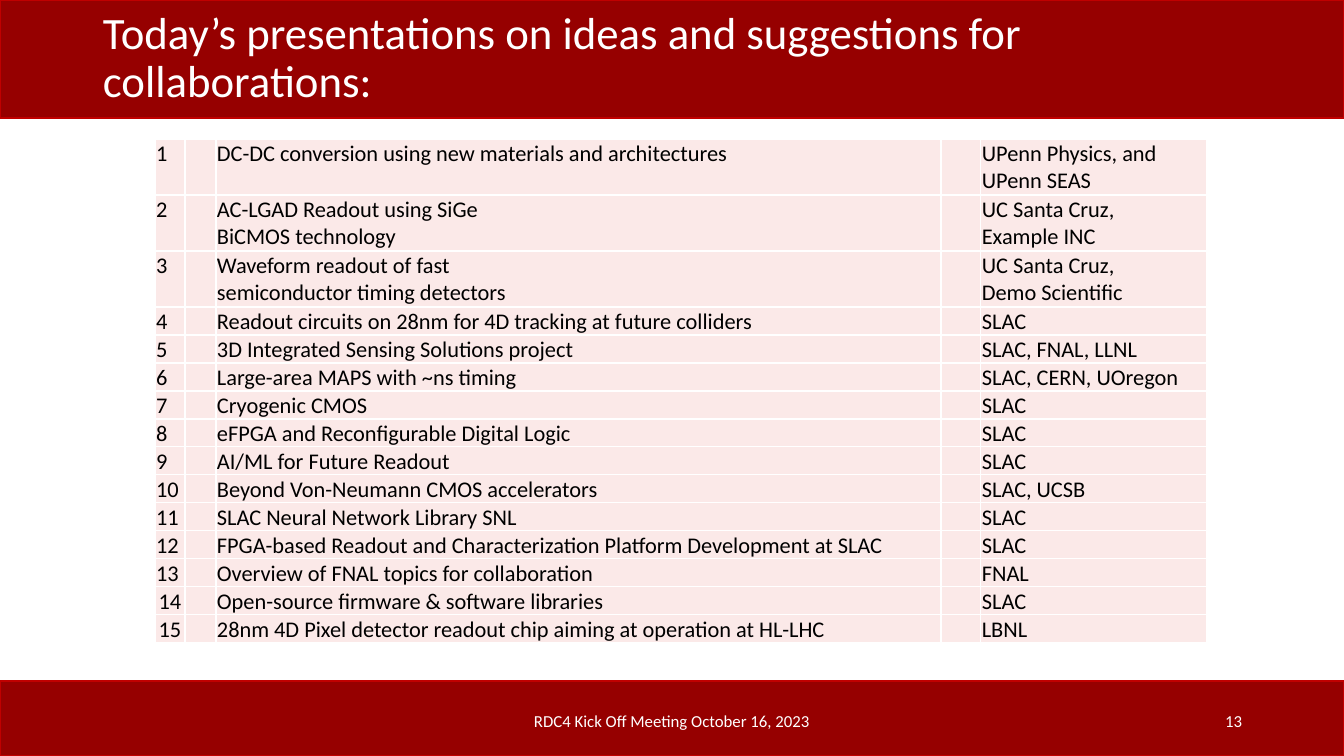
"""Build the slide listing today's presentations and their institutions."""
from lxml.etree import SubElement
from pptx import Presentation
from pptx.dml.color import RGBColor
from pptx.enum.shapes import MSO_SHAPE
from pptx.enum.text import MSO_ANCHOR as ANCHOR, PP_ALIGN as ALIGN
from pptx.oxml.ns import qn
from pptx.util import Pt

TITLE = "Today’s presentations on ideas and suggestions for collaborations:"
FOOTER = "RDC4 Kick Off Meeting October 16, 2023"
PAGE = "13"
TALKS = [
    ("DC-DC conversion using new materials and architectures", "UPenn Physics, and UPenn SEAS"),
    ("AC-LGAD Readout using SiGe\nBiCMOS technology", "UC Santa Cruz,\nExample INC"),
    ("Waveform readout of fast\nsemiconductor timing detectors", "UC Santa Cruz,\nDemo Scientific"),
    ("Readout circuits on 28nm for 4D tracking at future colliders", "SLAC"),
    ("3D Integrated Sensing Solutions project", "SLAC, FNAL, LLNL"),
    ("Large-area MAPS with ~ns timing", "SLAC, CERN, UOregon"),
    ("Cryogenic CMOS", "SLAC"),
    ("eFPGA and Reconfigurable Digital Logic", "SLAC"),
    ("AI/ML for Future Readout", "SLAC"),
    ("Beyond Von-Neumann CMOS accelerators", "SLAC, UCSB"),
    ("SLAC Neural Network Library SNL", "SLAC"),
    ("FPGA-based Readout and Characterization Platform Development at SLAC", "SLAC"),
    ("Overview of FNAL topics for collaboration", "FNAL"),
    ("Open-source firmware & software libraries", "SLAC"),
    ("28nm 4D Pixel detector readout chip aiming at operation at HL-LHC", "LBNL"),
]
CENTRED_FROM = 14
TALL_ROWS = 3
COLS = [30, 31, 725, 40, 226]
ROW_H = 28
TABLE_LEFT, TABLE_TOP = 155, 139
SLIDE_W, SLIDE_H = 1344, 756
BANDS = [(681, 75), (0, 118)]
FONT = "Calibri"
WHITE, BLACK, DARK_RED, RED, PINK = "FFFFFF", "000000", "960000", "C00000", "FBE9E8"


def px(n):
    return round(n * 914400 / 100.8)


def rgb(code):
    return RGBColor.from_string(code)


def write(tf, text, size, color, align=ALIGN.LEFT):
    tf.word_wrap = True
    p = tf.paragraphs[0]
    p.alignment = align
    for i, line in enumerate(text.split("\n")):
        if i:
            p.add_line_break()
        r = p.add_run()
        r.text = line
        r.font.name, r.font.size = FONT, Pt(size)
        r.font.color.rgb = rgb(color)
    return p


def add_band(s, top, height):
    sp = s.shapes.add_shape(MSO_SHAPE.RECTANGLE, 0, px(top), px(SLIDE_W), px(height))
    sp.shadow.inherit = False
    sp.fill.solid()
    sp.fill.fore_color.rgb = rgb(DARK_RED)
    sp.line.color.rgb = rgb(RED)
    sp.line.width = Pt(1)


def add_label(s, box, text, size, align):
    tf = s.shapes.add_textbox(*map(px, box)).text_frame
    tf.vertical_anchor = ANCHOR.MIDDLE
    return write(tf, text, size, WHITE, align)


def style_cell(cell):
    tc_pr = cell._tc.get_or_add_tcPr()
    for side in ("a:lnL", "a:lnR", "a:lnT", "a:lnB"):
        ln = SubElement(tc_pr, qn(side), w=str(Pt(1)))
        SubElement(SubElement(ln, qn("a:solidFill")), qn("a:srgbClr"), val=WHITE)
    cell.fill.solid()
    cell.fill.fore_color.rgb = rgb(PINK)
    cell.margin_left = cell.margin_right = cell.margin_top = px(1)
    cell.margin_bottom = 0


def add_talks(s):
    heights = [ROW_H * (2 if i < TALL_ROWS else 1) for i in range(len(TALKS))]
    frame = s.shapes.add_table(len(TALKS), len(COLS), px(TABLE_LEFT), px(TABLE_TOP),
                               px(sum(COLS)), px(sum(heights)))
    table = frame.table
    table.first_row = table.horz_banding = False
    for col, width in zip(table.columns, COLS):
        col.width = px(width)
    for n, (row, height, (topic, lab)) in enumerate(zip(table.rows, heights, TALKS), 1):
        row.height = px(height)
        for c, (cell, text) in enumerate(zip(row.cells, (str(n), "", topic, "", lab))):
            style_cell(cell)
            if text:
                centred = c == 0 and n >= CENTRED_FROM
                write(cell.text_frame, text, 16, BLACK, ALIGN.CENTER if centred else ALIGN.LEFT)
            else:
                SubElement(cell.text_frame.paragraphs[0]._p, qn("a:endParaRPr"), sz="1600")


def main():
    prs = Presentation()
    prs.slide_width, prs.slide_height = px(SLIDE_W), px(SLIDE_H)
    s = prs.slides.add_slide(prs.slide_layouts[6])
    for top, height in BANDS:
        add_band(s, top, height)
    add_label(s, (93, 0, 1159, 118), TITLE, 32, ALIGN.LEFT).line_spacing = 0.9
    add_label(s, (445, 701, 454, 40), FOOTER, 12, ALIGN.CENTER)
    add_label(s, (950, 701, 302, 40), PAGE, 12, ALIGN.RIGHT)
    add_talks(s)
    prs.save("out.pptx")


if __name__ == "__main__":
    main()
